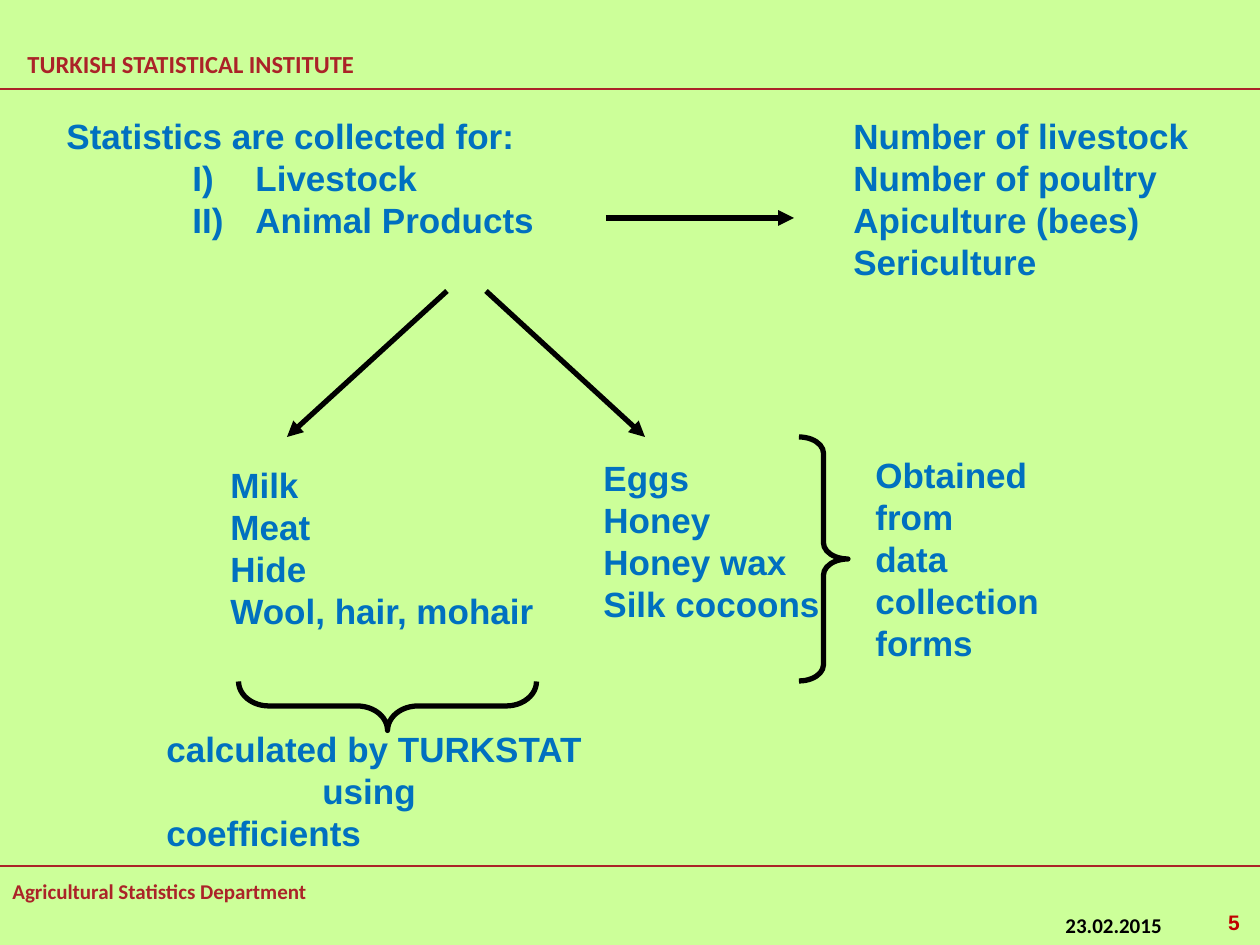
from lxml.etree import SubElement
from pptx import Presentation
from pptx.dml.color import RGBColor
from pptx.enum.shapes import MSO_CONNECTOR, MSO_SHAPE
from pptx.enum.text import MSO_ANCHOR, PP_ALIGN
from pptx.oxml.ns import qn
from pptx.util import Pt

PX = 914400 / 126
RED, BLUE, BLACK = "AB2328", "0070C0", "000000"


def emu(*vals):
    return [round(v * PX) for v in vals]


def color(code):
    return RGBColor.from_string(code)


class Page:
    """Holds the text style and the current slide."""

    def __init__(self, deck, back):
        self.font, self.size, self.ink = "Arial", 20, BLUE
        self.slide = deck.slides.add_slide(deck.slide_layouts[6])
        fill = self.slide.background.fill
        fill.solid()
        fill.fore_color.rgb = color(back)

    def text(self, x, y, w, h, *lines, font=None, size=None, ink=None,
             align=PP_ALIGN.LEFT, anchor=MSO_ANCHOR.TOP, wrap=False):
        box = self.slide.shapes.add_textbox(*emu(x, y, w, h))
        frame = box.text_frame
        frame.word_wrap = wrap
        frame.vertical_anchor = anchor
        for n, line in enumerate(lines):
            para = frame.paragraphs[0] if n == 0 else frame.add_paragraph()
            para.text = line
            para.alignment = align
            para.font.name = font or self.font
            para.font.size = Pt(size or self.size)
            para.font.bold = True
            para.font.color.rgb = color(ink or self.ink)
        return frame.paragraphs

    def indent(self, para, left, first=0, mark=None):
        props = para._p.get_or_add_pPr()
        left, first = emu(left, first)
        props.set("marL", str(left))
        props.set("indent", str(first))
        if mark:
            bullet = props.makeelement(qn("a:buAutoNum"), {"type": mark})
            props.insert_element_before(bullet, "a:tabLst", "a:defRPr")

    def line(self, x1, y1, x2, y2, ink=BLACK, width=3, head=False):
        link = self.slide.shapes.add_connector(
            MSO_CONNECTOR.STRAIGHT, *emu(x1, y1, x2, y2))
        link.line.color.rgb = color(ink)
        link.line.width = Pt(width)
        if head:
            SubElement(link.line._get_or_add_ln(), qn("a:tailEnd"), type="triangle")
        SubElement(link._element.spPr, qn("a:effectLst"))

    def brace(self, x, y, w, h, curve, turn=0):
        shape = self.slide.shapes.add_shape(
            MSO_SHAPE.RIGHT_BRACE, *emu(x, y, w, h))
        shape.shadow.inherit = False
        shape.adjustments[0] = curve
        shape.rotation = turn
        shape.fill.background()
        shape.line.color.rgb = color(BLACK)
        shape.line.width = Pt(3)


def main():
    deck = Presentation()
    deck.slide_width, deck.slide_height = emu(1260, 945)
    page = Page(deck, "CCFF99")

    page.text(15, 39, 446, 49, "TURKISH STATISTICAL INSTITUTE", font="Calibri",
              size=14, ink=RED, anchor=MSO_ANCHOR.MIDDLE)
    page.text(0, 872, 541, 66, "Agricultural Statistics Department",
              font="Calibri", size=12, ink=RED)
    for y in (89, 866):
        page.line(0, y, 1260, y, RED, 1.5)
    page.text(1053, 906, 130, 39, "23.02.2015", font="Calibri", size=12, ink=BLACK)
    page.text(958, 903, 294, 42, "5", size=12, ink="C00000",
              align=PP_ALIGN.RIGHT, wrap=True)

    _, *items = page.text(54, 108, 496, 140, "Statistics are collected for:",
                          "Livestock", "Animal Products")
    for item in items:
        page.indent(item, 189, -63, "romanUcParenR")
    page.text(841, 108, 363, 183, "Number of livestock", "Number of poultry",
              "Apiculture (bees)", "Sericulture")
    page.text(218, 457, 330, 183, "Milk", "Meat", "Hide", "Wool, hair, mohair")
    page.text(591, 450, 243, 183, "Eggs", "Honey", "Honey wax", "Silk cocoons")
    page.text(863, 447, 190, 224, "Obtained", "from", "data", "collection", "forms")
    _, using, _ = page.text(154, 721, 476, 140, "calculated by TURKSTAT",
                            "using", "coefficients")
    page.indent(using, 156)

    page.line(606, 218, 794, 218, head=True)
    page.line(447, 291, 287, 437, head=True)
    page.line(486, 291, 645, 437, head=True)
    page.brace(799, 437, 49, 244, 0.33)
    page.brace(363, 557, 49, 298, 0.62, turn=90)

    deck.save("out.pptx")


if __name__ == "__main__":
    main()
